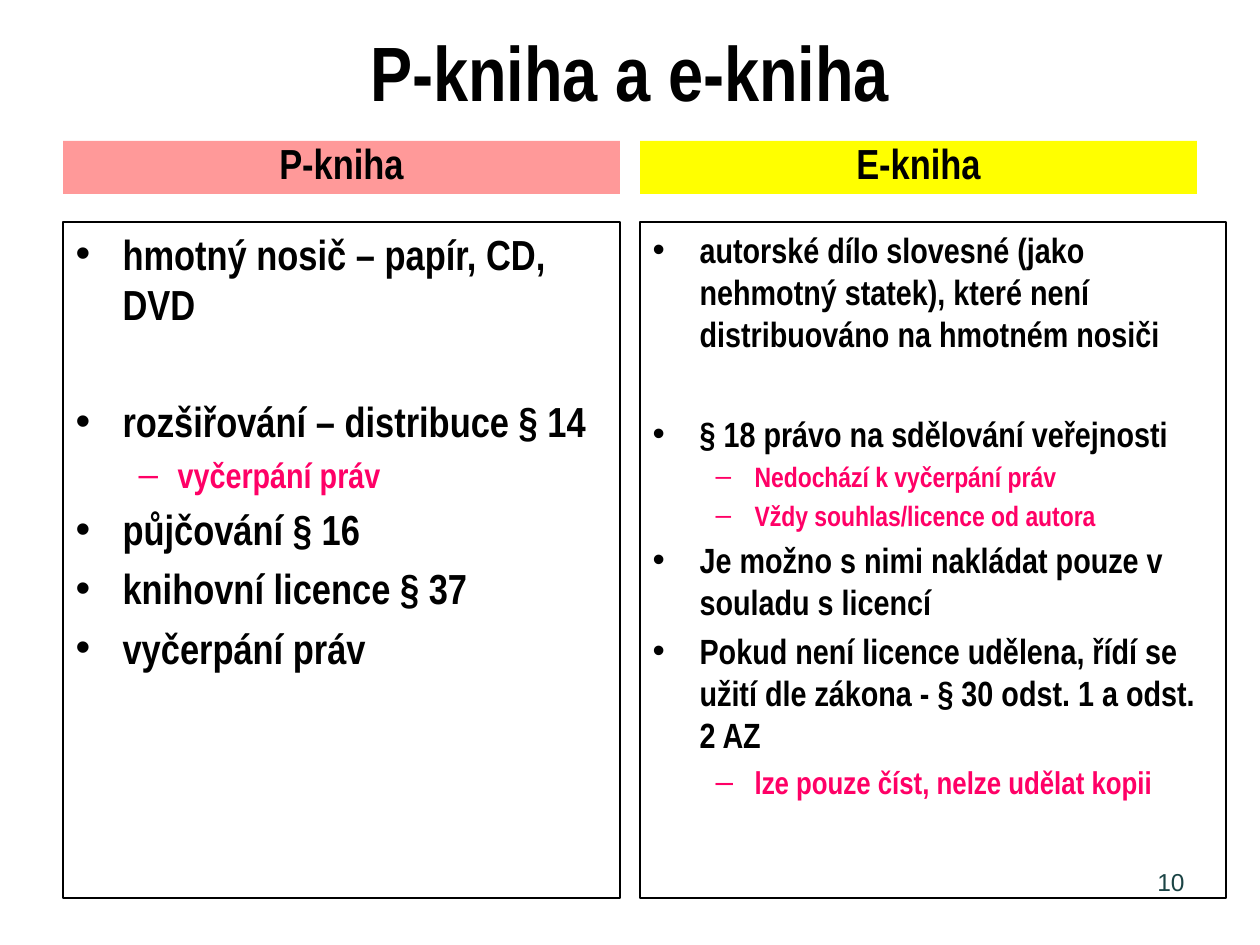
"""Builds the slide comparing printed books with e-books."""
from pptx import Presentation
from pptx.dml.color import RGBColor
from pptx.enum.text import MSO_ANCHOR, MSO_AUTO_SIZE, PP_ALIGN
from pptx.util import Pt

CENTER, RIGHT = PP_ALIGN.CENTER, PP_ALIGN.RIGHT
TOP, MIDDLE, BOTTOM = MSO_ANCHOR.TOP, MSO_ANCHOR.MIDDLE, MSO_ANCHOR.BOTTOM
NO_FIT = MSO_AUTO_SIZE.NONE
EMU_PER_PX = 914400 / 126
BLACK, PINK, TEAL = "000000", "FF0066", "1B4445"
HEADING_FONT, NUMBER_FONT = "Arial Narrow", "Arial"

TITLE = "P-kniha a e-kniha"
PAGE_NUMBER = "10"
INDENTS = [(47, -47), (102, -39)]
LEVEL_COLORS = [BLACK, PINK]
HEADING_TOP, HEADING_HEIGHT = 141, 53
LIST_TOP, LIST_HEIGHT = 222, 676
COLUMNS = [
    {
        "heading": "P-kniha", "fill": "FF9999", "left": 63,
        "heading_width": 557, "list_width": 557,
        "items": [
            (0, 24, 5, "hmotný nosič – papír, CD, DVD"),
            (0, 24, 38, "rozšiřování – distribuce § 14"),
            (1, 20, 4, "vyčerpání práv"),
            (0, 24, 5, "půjčování § 16"),
            (0, 24, 5, "knihovní licence § 37"),
            (0, 24, 5, "vyčerpání práv"),
        ],
    },
    {
        "heading": "E-kniha", "fill": "FFFF00", "left": 640,
        "heading_width": 557, "list_width": 586,
        "items": [
            (0, 20, 4, "autorské dílo slovesné (jako nehmotný statek), "
                       "které není distribuováno na hmotném nosiči"),
            (0, 20, 33, "§ 18 právo na sdělování veřejnosti"),
            (1, 16, 3, "Nedochází k vyčerpání práv"),
            (1, 16, 3, "Vždy souhlas/licence od autora"),
            (0, 20, 4, "Je možno s nimi nakládat pouze v souladu s licencí"),
            (0, 20, 4, "Pokud není licence udělena, řídí se užití dle zákona "
                       "- § 30 odst. 1 a odst. 2 AZ"),
            (1, 18, 4, "lze pouze číst, nelze udělat kopii"),
        ],
    },
]


def px(length):
    return round(length * EMU_PER_PX)


def color(value):
    return RGBColor.from_string(value)


def place(shape, left, top, width, height, anchor):
    shape.left, shape.top = px(left), px(top)
    shape.width, shape.height = px(width), px(height)
    frame = shape.text_frame
    frame.word_wrap, frame.auto_size = True, NO_FIT
    frame.vertical_anchor = anchor
    return frame


def add_text(paragraph, text, size, value=BLACK, font=HEADING_FONT, bold=True):
    run = paragraph.add_run()
    run.text = text
    run.font.size, run.font.name, run.font.bold = Pt(size), font, bold
    run.font.color.rgb = color(value)


def fill_list(frame, items):
    for index, (level, size, space, text) in enumerate(items):
        paragraph = frame.add_paragraph() if index else frame.paragraphs[0]
        paragraph.level, paragraph.space_before = level, Pt(space)
        margin, indent = INDENTS[level]
        properties = paragraph._p.get_or_add_pPr()
        properties.set("marL", str(px(margin)))
        properties.set("indent", str(px(indent)))
        add_text(paragraph, text, size, LEVEL_COLORS[level])


def add_column(heading, body, column):
    frame = place(heading, column["left"], HEADING_TOP,
                  column["heading_width"], HEADING_HEIGHT, BOTTOM)
    heading.fill.solid()
    heading.fill.fore_color.rgb = color(column["fill"])
    paragraph = frame.paragraphs[0]
    paragraph.alignment, paragraph.space_before = CENTER, Pt(5)
    add_text(paragraph, column["heading"], 24)

    frame = place(body, column["left"], LIST_TOP,
                  column["list_width"], LIST_HEIGHT, TOP)
    body.line.color.rgb = color(BLACK)
    body.line.width = Pt(0.75)
    fill_list(frame, column["items"])


def main():
    presentation = Presentation()
    presentation.slide_width, presentation.slide_height = px(1260), px(945)
    slide = presentation.slides.add_slide(presentation.slide_layouts[4])
    title, *bodies = slide.placeholders

    paragraph = place(title, 63, 16, 1134, 110, MIDDLE).paragraphs[0]
    paragraph.alignment = CENTER
    add_text(paragraph, TITLE, 44)

    for heading, body, column in zip(bodies[::2], bodies[1::2], COLUMNS):
        add_column(heading, body, column)

    number = slide.shapes.add_textbox(0, 0, 0, 0)
    paragraph = place(number, 903, 861, 294, 66, TOP).paragraphs[0]
    paragraph.alignment = RIGHT
    add_text(paragraph, PAGE_NUMBER, 14, TEAL, NUMBER_FONT, False)

    presentation.save("out.pptx")


if __name__ == "__main__":
    main()
